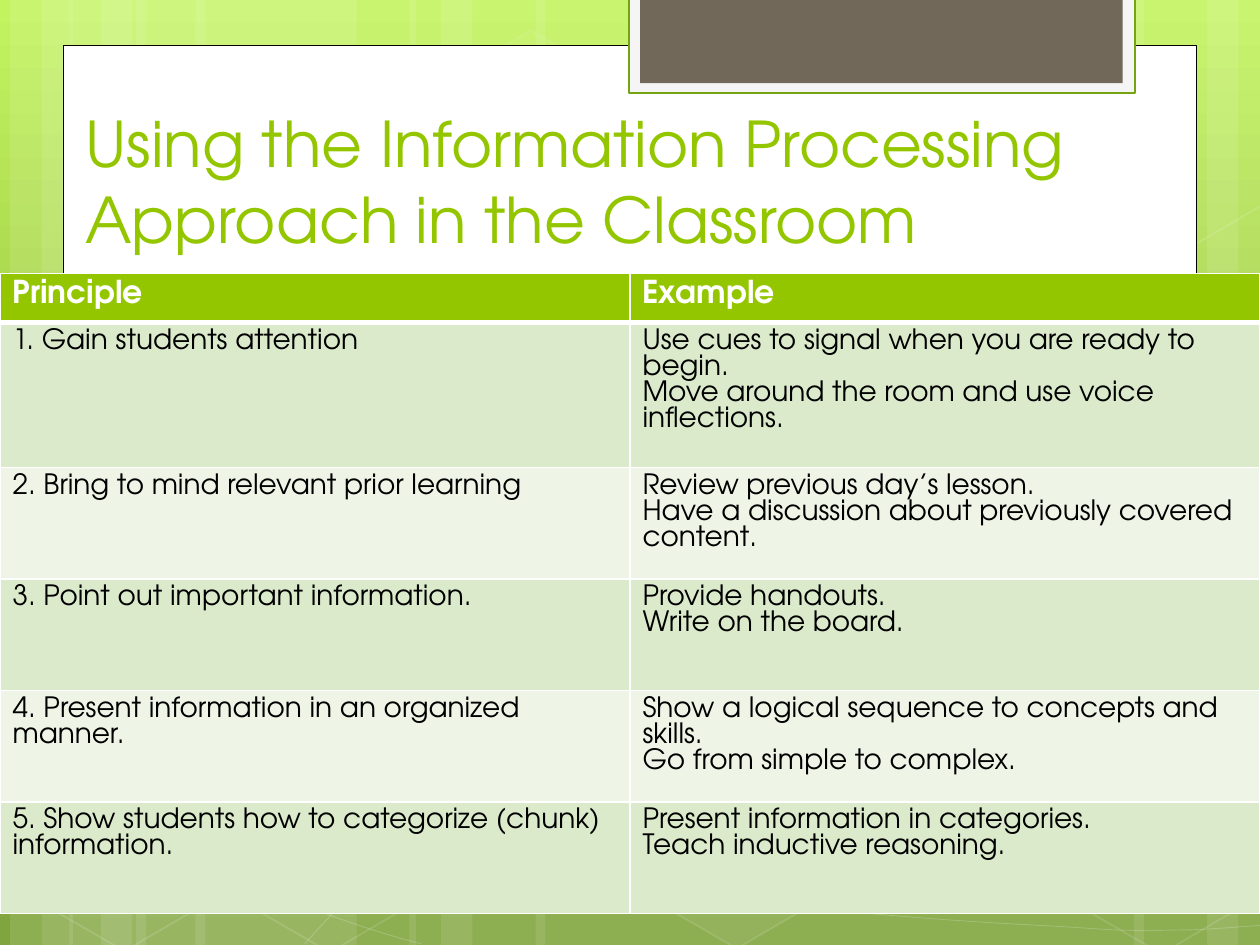
from math import cos, radians, sin

from lxml.etree import SubElement
from pptx import Presentation
from pptx.dml.color import RGBColor
from pptx.enum.shapes import MSO_SHAPE as Preset
from pptx.enum.text import MSO_ANCHOR as Anchor
from pptx.oxml.ns import qn
from pptx.util import Inches, Pt

TITLE = "Using the Information Processing Approach in the Classroom"
HEADINGS = ("Principle", "Example")
PRINCIPLES = [
    ("1. Gain students attention",
     ["Use cues to signal when you are ready to begin.",
      "Move around the room and use voice inflections."]),
    ("2. Bring to mind relevant prior learning",
     ["Review previous day’s lesson.",
      "Have a discussion about previously covered content."]),
    ("3. Point out important information.",
     ["Provide handouts.", "Write on the board."]),
    ("4. Present information in an organized manner.",
     ["Show a logical sequence to concepts and skills.",
      "Go from simple to complex."]),
    ("5. Show students how to categorize (chunk) information.",
     ["Present information in categories.", "Teach inductive reasoning."]),
]
FONT = "TeX Gyre Adventor"
COLORS = {"white": "FFFFFF", "black": "000000", "green": "94C600", "edge": "74A510",
          "band": "DCEACC", "pale": "EEF5E7", "tab": "F5F5F5", "taupe": "71685A"}
BACKDROP = [(0, "C3F35F"), (62, "93BF3F"), (100, "81A53E")]

WIDTH, HEIGHT = 10, 7.5
TABLE_TOP, TABLE_HEIGHT = 2.17, 5.08
HEADER_HEIGHT, FIRST_HEIGHT = 0.39, 1.15
OTHER_COUNT = len(PRINCIPLES) - 1
OTHER_HEIGHT = (TABLE_HEIGHT - HEADER_HEIGHT - FIRST_HEIGHT) / OTHER_COUNT
ROW_HEIGHTS = [HEADER_HEIGHT, FIRST_HEIGHT] + [OTHER_HEIGHT] * OTHER_COUNT

# Background decoration: left and width of each strip
STRIPS = [(1.08, 1.75), (0.08, 0.5), (0.33, 0.83), (1.55, 1.75), (0.55, 0.5), (0.8, 0.83),
          (7.33, 1.75), (9.58, 0.5), (9, 0.83), (4.25, 3.08), (3.25, 0.5), (3.5, 0.83)]
# Start point, then Bezier segments (two handles and an end point) or straight ones (end point)
CURVES = [
    [(0.07, 6.73), (0.61, 6.76, 1.15, 6.79, 1.9, 6.78), (2.65, 6.77, 3.58, 6.75, 4.58, 6.65),
     (5.58, 6.55, 7, 6.36, 7.92, 6.17), (8.83, 5.98, 9.77, 5.68, 10.07, 5.51)],
    [(0.07, 4.77), (0.36, 4.61, 0.65, 4.46, 1.21, 4.31), (1.78, 4.16, 2.59, 3.94, 3.47, 3.87),
     (4.36, 3.8, 5.44, 3.79, 6.54, 3.87), (7.64, 3.95, 9.47, 4.26, 10.07, 4.34)],
    [(0.06, 6.17), (1.27, 6.72, 2.47, 7.27, 3.34, 7.49)],
    [(0.07, 5.78), (0.38, 5.89, 0.7, 6, 1.28, 6.16), (1.86, 6.31, 2.73, 6.56, 3.57, 6.73),
     (4.4, 6.9, 5.45, 7.08, 6.28, 7.18), (7.11, 7.29, 8, 7.33, 8.53, 7.36),
     (9.05, 7.4, 9.19, 7.38, 9.45, 7.38), (9.71, 7.37, 9.89, 7.35, 10.07, 7.34)],
    [(2.42, 7.49), (2.6, 7.29, 2.78, 7.09, 3.02, 6.91), (3.26, 6.73, 3.6, 6.53, 3.88, 6.39),
     (4.16, 6.25, 4.33, 6.19, 4.7, 6.09), (5.06, 5.99, 5.73, 5.85, 6.08, 5.78),
     (6.44, 5.71, 6.49, 5.71, 6.8, 5.69), (7.11, 5.66, 7.6, 5.63, 7.94, 5.62),
     (8.29, 5.61, 8.86, 5.62, 8.86, 5.62), (9.53, 5.62),
     (9.71, 5.63, 9.88, 5.64, 9.97, 5.65), (10.06, 5.66, 10.03, 5.65, 10.06, 5.66)],
]
# Left, top, fill opacity (None for no fill), line opacity
HEXAGONS = [(3.34, 0.36, 4, 8), (4.97, 5.89, 6, 12), (0.11, 5.91, None, 12),
            (0.14, 3.12, 7, 8), (1.74, 5.92, None, 12), (7.53, 4.53, 10, 12),
            (8.34, 5.93, None, 12), (8.34, 3.14, 7, 8)]
HEXAGON_SIZE, TILT = (1.75, 1.52), 30
# Frame centre, fill opacity, corners as seen on the slide
CUT_HEXAGONS = [
    ((0.36, 5.35), 10, [(0.08, 4.45), (0.19, 4.38), (0.96, 4.82), (0.95, 5.7),
                        (0.2, 6.14), (0.08, 6.07)]),
    ((9.85, 5.2), 4, [(9.26, 4.85), (10.01, 4.41), (10.09, 4.46), (10.09, 6.13),
                      (10.02, 6.17), (9.26, 5.73)]),
    ((9.85, 2.41), None, [(9.26, 2.07), (10.01, 1.63), (10.1, 1.68), (10.09, 3.35),
                          (10.02, 3.39), (9.26, 2.95)]),
]


def rgb(name):
    return RGBColor.from_string(COLORS[name])


def paint(fill, color, opacity=100):
    if opacity is None:
        fill.background()
        return
    fill.solid()
    fill.fore_color.rgb = rgb(color)
    if opacity < 100:
        tint = fill._xPr.find(qn("a:solidFill"))[0]
        SubElement(tint, qn("a:alpha"), val=str(opacity * 1000))


def style(shape, fill, opacity=100, line=None, weight=1, line_opacity=100):
    shape.shadow.inherit = False
    paint(shape.fill, fill, opacity)
    if line:
        shape.line.width = Pt(weight)
        paint(shape.line.fill, line, line_opacity)
    else:
        shape.line.fill.background()


def add_preset(shapes, preset, *box):
    return shapes.add_shape(preset, *map(Inches, box))


def add_outline(shapes, points, close):
    start, *rest = [(Inches(x), Inches(y)) for x, y in points]
    builder = shapes.build_freeform(*start)
    builder.add_line_segments(rest, close=close)
    return builder.convert_to_shape()


def add_curve(shapes, curve):
    """Outline through handles and ends, with each triple then merged into one Bezier segment."""
    points = [pair for part in curve for pair in zip(part[::2], part[1::2])]
    shape = add_outline(shapes, points, False)
    lines = iter(list(shape._element.iter(qn("a:lnTo"))))
    for segment in curve[1:]:
        first = next(lines)
        if len(segment) == 6:
            first.tag = qn("a:cubicBezTo")
            for _ in range(2):
                extra = next(lines)
                first.append(extra[0])
                extra.getparent().remove(extra)
    return shape


def untilt(point, centre):
    dx, dy = point[0] - centre[0], point[1] - centre[1]
    c, s = cos(radians(TILT)), sin(radians(TILT))
    return centre[0] + dx * c + dy * s, centre[1] - dx * s + dy * c


def write(frame, lines, size, color, pitch, bold=False):
    """Fill a text frame, one paragraph a line; pitch is the line height in points."""
    frame.text = "\n".join(lines)
    for paragraph in frame.paragraphs:
        paragraph.line_spacing = Pt(pitch)
        for run in paragraph.runs:
            run.font.name, run.font.size, run.font.bold = FONT, Pt(size), bold
            run.font.color.rgb = rgb(color)


def border(cell, **weights):
    properties = cell._tc.get_or_add_tcPr()
    for place, side in enumerate("LRTB"):
        line = SubElement(properties, qn(f"a:ln{side}"), w=str(Pt(weights.get(side, 1))))
        SubElement(SubElement(line, qn("a:solidFill")), qn("a:srgbClr"), val=COLORS["white"])
        properties.insert(place, line)


def paint_backdrop(slide):
    fill = slide.background.fill
    fill.gradient()
    fill.gradient_angle = 270
    stops = next(slide._element.iter(qn("a:gsLst")))
    for stop in list(stops):
        stops.remove(stop)
    for position, color in BACKDROP:
        stop = SubElement(stops, qn("a:gs"), pos=str(position * 1000))
        SubElement(stop, qn("a:srgbClr"), val=color)


def decorate(shapes):
    for left, width in STRIPS:
        style(add_preset(shapes, Preset.RECTANGLE, left, 0, width, HEIGHT), "white", 10)
    for curve in CURVES:
        style(add_curve(shapes, curve), "white", None, "white", 0.5, 20)
    for left, top, opacity, line_opacity in HEXAGONS:
        hexagon = add_preset(shapes, Preset.HEXAGON, left, top, *HEXAGON_SIZE)
        hexagon.adjustments[0] = 0.285
        hexagon.rotation = TILT
        style(hexagon, "white", opacity, "white", 1, line_opacity)
    for centre, opacity, corners in CUT_HEXAGONS:
        piece = add_outline(shapes, [untilt(corner, centre) for corner in corners], True)
        piece.rotation = TILT
        style(piece, "white", opacity, "white", 1, 12)
    style(add_preset(shapes, Preset.RECTANGLE, 0.5, 0.36, 9, 6.76), "white", 100, "black", 0.5)
    style(add_preset(shapes, Preset.RECTANGLE, 4.99, -0.02, 4.02, 0.76), "tab", 100, "edge", 1.25)
    style(add_preset(shapes, Preset.RECTANGLE, 5.08, -0.02, 3.83, 0.68), "taupe")


def add_principles(shapes):
    rows = [[[heading] for heading in HEADINGS]]
    rows += [[[principle], examples] for principle, examples in PRINCIPLES]
    box = map(Inches, (0, TABLE_TOP, WIDTH, TABLE_HEIGHT))
    table = shapes.add_table(len(rows), len(HEADINGS), *box).table
    for r, (row, height) in enumerate(zip(rows, ROW_HEIGHTS)):
        table.rows[r].height = Inches(height)
        for c, lines in enumerate(row):
            cell = table.cell(r, c)
            if r == 0:
                write(cell.text_frame, lines, 18, "white", 16.7, bold=True)
                paint(cell.fill, "green")
                border(cell, B=3)
            else:
                write(cell.text_frame, lines, 16, "black", 14.9)
                paint(cell.fill, "band" if r % 2 else "pale")
                border(cell, T=3 if r == 1 else 1)


def main():
    deck = Presentation()
    deck.slide_width, deck.slide_height = Inches(WIDTH), Inches(HEIGHT)
    slide = deck.slides.add_slide(deck.slide_layouts[6])
    paint_backdrop(slide)
    decorate(slide.shapes)
    title = slide.shapes.add_textbox(*map(Inches, (0.58, 0.58, 8.67, 1.5))).text_frame
    title.word_wrap, title.vertical_anchor = True, Anchor.BOTTOM
    write(title, [TITLE], 36, "green", 43.4)
    add_principles(slide.shapes)
    deck.save("out.pptx")


if __name__ == "__main__":
    main()
